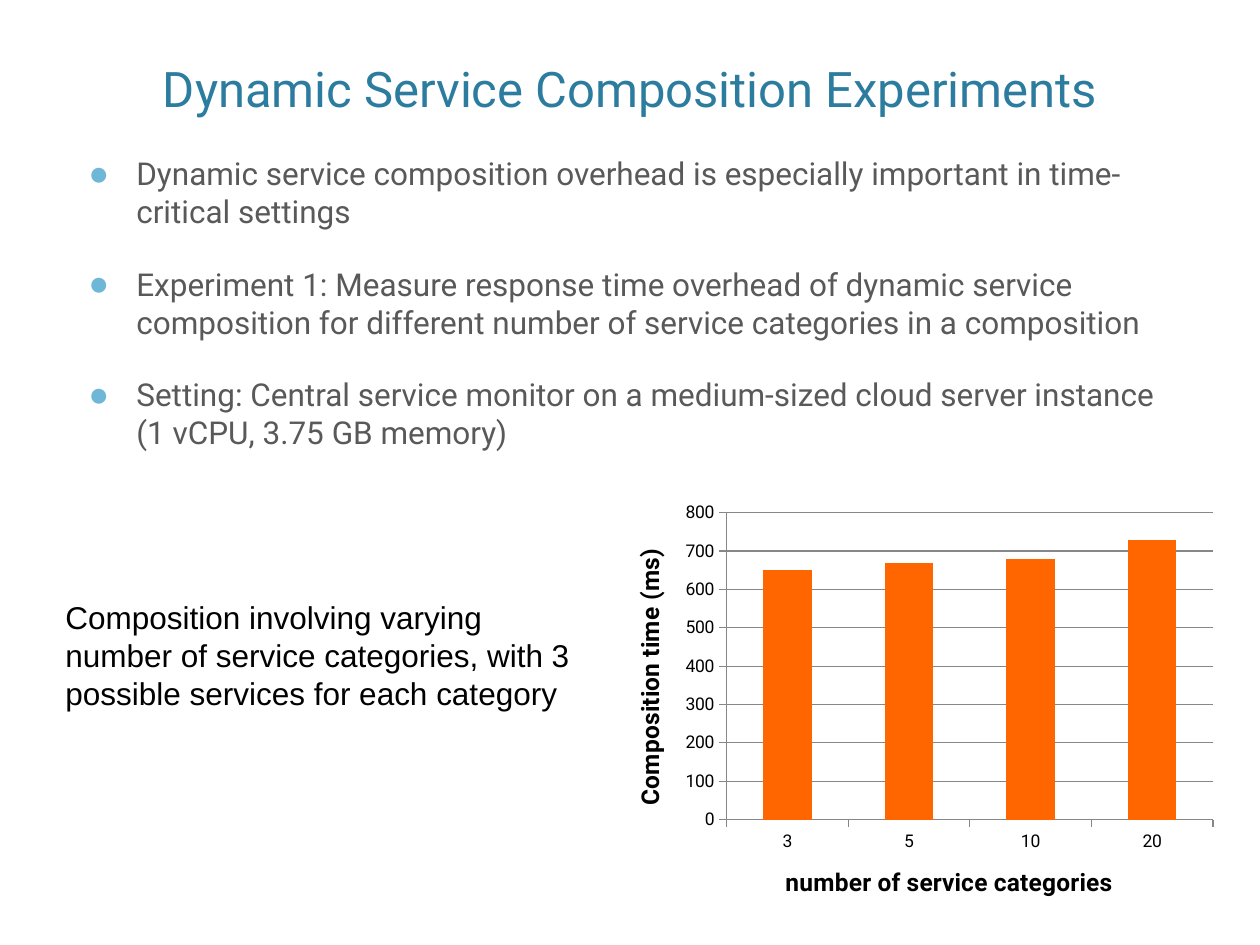
from lxml import etree
from pptx import Presentation, util as u
from pptx.chart.data import CategoryChartData
from pptx.dml.color import RGBColor
from pptx.enum import chart as charts, text
from pptx.oxml import parse_xml
from pptx.oxml.ns import nsdecls, qn

PX_PER_INCH = 126
COLORS = {"title": "2C7C9F", "body": "595959", "bullet": "6FB7D7",
          "black": "000000", "bar": "FF6600", "grid": "878787"}

TITLE = "Dynamic Service Composition Experiments"
BULLETS = [
    "Dynamic service composition overhead is especially important in time-critical settings",
    "Experiment 1: Measure response time overhead of dynamic service "
    "composition for different number of service categories in a composition",
    "Setting: Central service monitor on a medium-sized cloud server instance (1 "
    "vCPU, 3.75 GB memory)",
]
CAPTION = ("Composition involving varying number of service categories, "
           "with 3 possible services for each category")
COMPOSITION_TIMES = {"3": 650, "5": 670, "10": 680, "20": 730}
AXIS_TITLES = {"category": "number of service categories", "value": "Composition time (ms)"}

TITLE_BOX = (76, 14, 1108, 110)
BODY_BOX = (76, 148, 1108, 370)
CAPTION_BOX = (53, 592, 537, 127)
CHART_BOX = (605, 494, 621, 428)
PLOT_BOX = (727, 513, 486, 307)
BULLET_INDENT = 48


def px(length):
    return u.Emu(round(length * u.Inches(1) / PX_PER_INCH))


def color(name):
    return RGBColor.from_string(COLORS[name])


def style(font, size, name, family="Roboto", bold=False):
    font.size = u.Pt(size)
    font.name = family
    font.bold = bold
    font.color.rgb = color(name)


def add_text(slide, box, lines, size, name, family="Roboto"):
    shape = slide.shapes.add_textbox(*map(px, box))
    frame = shape.text_frame
    frame.word_wrap = True
    frame.text = "\n".join(lines)
    for paragraph in frame.paragraphs:
        for run in paragraph.runs:
            style(run.font, size, name, family)
    return frame


def add_bullet(paragraph):
    paragraph.space_before = u.Pt(20)
    properties = paragraph._p.get_or_add_pPr()
    properties.set("marL", str(px(BULLET_INDENT)))
    properties.set("indent", str(-px(BULLET_INDENT)))
    bullet_color = etree.SubElement(properties, qn("a:buClr"))
    etree.SubElement(bullet_color, qn("a:srgbClr"), val=COLORS["bullet"])
    etree.SubElement(properties, qn("a:buSzPct"), val="110000")
    etree.SubElement(properties, qn("a:buFont"), typeface="Arial")
    etree.SubElement(properties, qn("a:buChar"), char="●")


def place_plot(chart):
    left, top, width, height = CHART_BOX
    plot_left, plot_top, plot_width, plot_height = PLOT_BOX
    places = {"x": (plot_left - left) / width, "y": (plot_top - top) / height,
              "w": plot_width / width, "h": plot_height / height}
    modes = "".join(f'<c:{key}Mode val="edge"/>' for key in "xy")
    values = "".join(f'<c:{key} val="{value:.3f}"/>' for key, value in places.items())
    plot_area = chart._chartSpace.chart.plotArea
    for layout in plot_area.findall(qn("c:layout")):
        plot_area.remove(layout)
    plot_area.insert(0, parse_xml(
        f'<c:layout {nsdecls("c")}><c:manualLayout><c:layoutTarget val="inner"/>'
        f'{modes}{values}</c:manualLayout></c:layout>'))


def style_axis(axis, title):
    axis.has_title = True
    axis.axis_title.text_frame.text = title
    run = axis.axis_title.text_frame.paragraphs[0].runs[0]
    style(run.font, 14, "black", bold=True)
    style(axis.tick_labels.font, 10, "black")
    axis.major_tick_mark = charts.XL_TICK_MARK.OUTSIDE
    axis.format.line.color.rgb = color("grid")


def add_time_chart(slide):
    data = CategoryChartData()
    data.categories = list(COMPOSITION_TIMES)
    data.add_series("Series 1", list(COMPOSITION_TIMES.values()))
    chart = slide.shapes.add_chart(
        charts.XL_CHART_TYPE.COLUMN_CLUSTERED, *map(px, CHART_BOX), data).chart
    chart.has_legend = False
    chart.has_title = False
    style(chart.font, 10, "black")
    style_axis(chart.category_axis, AXIS_TITLES["category"])
    value_axis = chart.value_axis
    style_axis(value_axis, AXIS_TITLES["value"])
    value_axis.minimum_scale = 0
    value_axis.maximum_scale = 800
    value_axis.major_unit = 100
    value_axis.has_major_gridlines = True
    value_axis.major_gridlines.format.line.color.rgb = color("grid")
    plot = chart.plots[0]
    plot.gap_width = 150
    plot.vary_by_categories = False
    fill = plot.series[0].format.fill
    fill.solid()
    fill.fore_color.rgb = color("bar")
    place_plot(chart)


def main():
    presentation = Presentation()
    presentation.slide_width = u.Inches(10)
    presentation.slide_height = u.Inches(7.5)
    slide = presentation.slides.add_slide(presentation.slide_layouts[6])

    title = add_text(slide, TITLE_BOX, [TITLE], 28, "title")
    title.vertical_anchor = text.MSO_ANCHOR.BOTTOM
    title.paragraphs[0].alignment = text.PP_ALIGN.CENTER

    body = add_text(slide, BODY_BOX, BULLETS, 18, "body")
    for paragraph in body.paragraphs:
        add_bullet(paragraph)

    add_time_chart(slide)
    caption = add_text(slide, CAPTION_BOX, [CAPTION], 18, "black", "Arial")
    caption.auto_size = text.MSO_AUTO_SIZE.SHAPE_TO_FIT_TEXT
    presentation.save("out.pptx")


if __name__ == "__main__":
    main()
